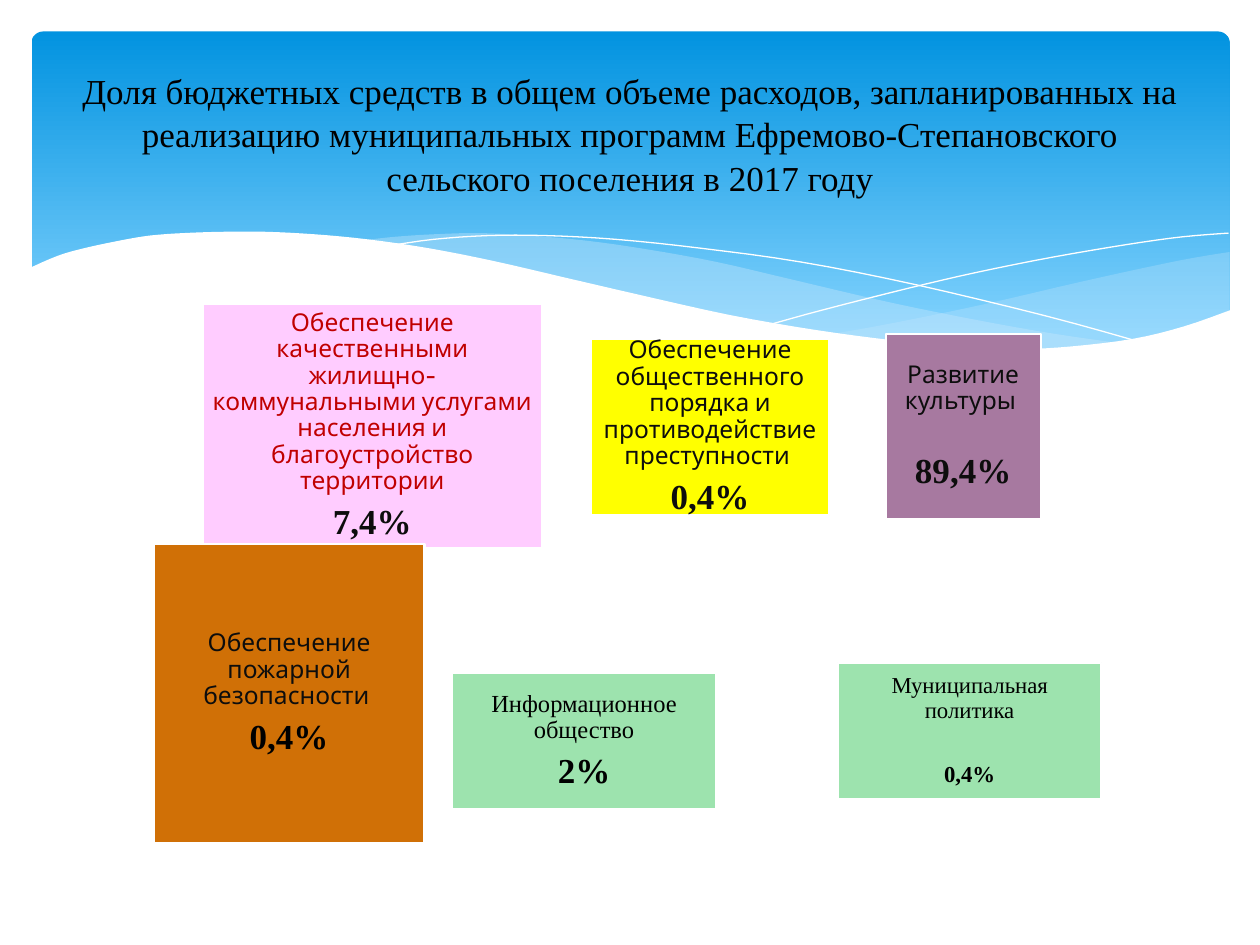
from pptx import Presentation
from pptx.dml.color import RGBColor
from pptx.enum.shapes import MSO_SHAPE
from pptx.enum.text import MSO_ANCHOR, PP_ALIGN
from pptx.oxml import parse_xml
from pptx.oxml.ns import nsdecls
from pptx.util import Inches, Pt

RECT, ROUNDED = MSO_SHAPE.RECTANGLE, MSO_SHAPE.ROUNDED_RECTANGLE
MIDDLE, CENTER = MSO_ANCHOR.MIDDLE, PP_ALIGN.CENTER
SERIF, SANS = "Times New Roman", "Cabin"

TITLE = ("Доля бюджетных средств в общем объеме расходов, запланированных на "
         "реализацию муниципальных программ Ефремово-Степановского "
         "сельского поселения в 2017 году")

# (left, top, width, height), fill, (label, font, size, colour),
# (share, size, colour), extra gap above the share in points
PROGRAMS = [
    ((1.61, 2.41, 2.69, 1.94), "FFCCFF",
     ("Обеспечение качественными жилищно-коммунальными услугами населения "
      "и благоустройство территории", SANS, 14, "C00000"),
     ("7,4%", 20, "0D0D0D"), 0),
    ((4.69, 2.69, 1.89, 1.4), "FFFF00",
     ("Обеспечение общественного порядка и противодействие преступности ",
      SANS, 14, "0D0D0D"), ("0,4%", 20, "0D0D0D"), 0),
    ((7.03, 2.65, 1.23, 1.47), "A779A0",
     ("Развитие культуры ", SANS, 14, "0D0D0D"), ("89,4%", 20, "0D0D0D"), 17),
    ((1.22, 4.32, 2.15, 2.37), "D07006",
     ("Обеспечение пожарной безопасности ", SANS, 14, "0D0D0D"),
     ("0,4%", 20, "000000"), 0),
    ((3.59, 5.34, 2.09, 1.08), "9DE3AE",
     ("Информационное общество", SERIF, 14, "000000"),
     ("2%", 20, "000000"), 0),
    ((6.65, 5.26, 2.09, 1.08), "9DE3AE",
     ("Муниципальная политика", SERIF, 13, "000000"),
     ("0,4%", 13, "000000"), 18),
]

# Each wave is a list of smooth runs; runs meet at corners.
RIGHT_WAVE = [
    [(9.76, 2), (9.35, 2.07), (8.61, 2.23), (7.79, 2.42), (7.06, 2.57), (6.61, 2.65)],
    [(6.61, 2.65), (7.05, 2.71), (7.57, 2.76), (8.03, 2.78), (8.44, 2.77),
     (8.81, 2.73), (9.13, 2.67), (9.42, 2.59), (9.76, 2.47)],
]
LEFT_WAVE = [
    [(8.93, 2.73), (8.37, 2.65), (7.75, 2.54), (7.06, 2.4), (6.29, 2.22),
     (5.69, 2.08), (5.14, 1.98), (4.65, 1.91), (4.2, 1.87), (3.8, 1.85),
     (3.44, 1.86), (3.13, 1.88), (2.86, 1.91)],
    [(2.86, 1.91), (3.42, 1.99), (4.04, 2.11), (4.49, 2.22), (5.3, 2.4),
     (6.01, 2.55), (6.65, 2.66), (7.22, 2.74), (7.73, 2.77), (8.18, 2.78),
     (8.57, 2.77), (8.93, 2.73)],
]
FALLING_LINE = [
    [(3.09, 1.95), (3.44, 1.9), (3.87, 1.87), (4.33, 1.87), (4.89, 1.9),
     (5.56, 1.97), (6.36, 2.08), (7.27, 2.26), (8.31, 2.51), (9.07, 2.72)],
]
RISING_LINE = [
    [(6.13, 2.57), (6.53, 2.46), (7.2, 2.29), (7.76, 2.16), (8.36, 2.04),
     (8.95, 1.94), (9.38, 1.88), (9.75, 1.85)],
]
WHITE_WAVE = [
    [(9.77, 2.46), (9.4, 2.59), (8.99, 2.69), (8.5, 2.75), (8.09, 2.77),
     (7.61, 2.75), (7.08, 2.7), (6.48, 2.62), (5.79, 2.5), (5.03, 2.33),
     (4.47, 2.2), (3.91, 2.07), (3.4, 1.97), (2.92, 1.9), (2.5, 1.86),
     (2.11, 1.84), (1.77, 1.84), (1.46, 1.85), (1.19, 1.87), (0.95, 1.91),
     (0.67, 1.97), (0.46, 2.03), (0.23, 2.13)],
    [(0.23, 2.13), (0.23, 3.29)],
    [(0.23, 3.29), (9.77, 3.29)],
]


def rgb(value):
    return RGBColor.from_string(value)


def smooth(run, steps=4):
    """Return points of a Catmull-Rom curve through the run."""
    ends = [run[0], *run, run[-1]]
    points = [run[0]]
    for a, b, c, d in zip(ends, ends[1:], ends[2:], ends[3:]):
        for i in range(1, steps + 1):
            t = i / steps
            points.append(tuple(
                0.5 * (2 * q + (r - p) * t + (2 * p - 5 * q + 4 * r - s) * t ** 2
                       + (3 * q - p - 3 * r + s) * t ** 3)
                for p, q, r, s in zip(a, b, c, d)))
    return points


def add_curve(shapes, runs, closed):
    points = [(Inches(x), Inches(y)) for run in runs for x, y in smooth(run)]
    builder = shapes.build_freeform(*points[0])
    builder.add_line_segments(points[1:], close=closed)
    sp = builder.convert_to_shape()
    sp.shadow.inherit = False
    return sp


def add_wave(shapes, runs, color, opacity=100):
    sp = add_curve(shapes, runs, True)
    sp.fill.solid()
    sp.fill.fore_color.rgb = rgb(color)
    sp.line.fill.background()
    if opacity < 100:
        srgb = sp.fill._xPr.find(".//{*}srgbClr")
        srgb.append(parse_xml(f'<a:alpha {nsdecls("a")} val="{opacity * 1000}"/>'))


def add_thin_line(shapes, runs):
    sp = add_curve(shapes, runs, False)
    sp.fill.background()
    sp.line.color.rgb = rgb("FFFFFF")
    sp.line.width = Pt(0)


def add_banner(shapes):
    sp = shapes.add_shape(ROUNDED, *map(Inches, (0.25, 0.25, 9.51, 2.7)))
    sp.adjustments[0] = 0.034
    sp.shadow.inherit = False
    sp.line.fill.background()
    sp.fill.gradient()
    sp.fill.gradient_angle = 270
    for stop, (position, color) in zip(sp.fill.gradient_stops,
                                       [(0, "0293E0"), (0.9, "83D3FE")]):
        stop.position = position
        stop.color.rgb = rgb(color)


def write(p, text, font, size, color, bold=False):
    p.text = text
    p.alignment = CENTER
    f = p.runs[0].font
    f.name, f.size, f.bold = font, Pt(size), bold
    f.color.rgb = rgb(color)


def add_program(shapes, box, fill, label, share, gap):
    sp = shapes.add_shape(RECT, *map(Inches, box))
    sp.shadow.inherit = False
    sp.fill.solid()
    sp.fill.fore_color.rgb = rgb(fill)
    sp.line.color.rgb = rgb("FFFFFF")
    sp.line.width = Pt(1.25)
    tf = sp.text_frame
    tf.word_wrap = True
    tf.vertical_anchor = MIDDLE
    tf.margin_left = tf.margin_right = tf.margin_top = tf.margin_bottom = Inches(0.06)
    value, size, color = share
    write(tf.paragraphs[0], *label)
    write(tf.add_paragraph(), value, SERIF, size, color, bold=True)
    for p in tf.paragraphs:
        p.line_spacing = 0.9
        p.space_after = Pt(5)
    p.space_before = Pt(gap)


def add_title(shapes):
    tf = shapes.add_textbox(*map(Inches, (0.5, 0.37, 9, 1.37))).text_frame
    tf.word_wrap = True
    tf.vertical_anchor = MIDDLE
    write(tf.paragraphs[0], TITLE, SERIF, 20, "000000")
    tf.paragraphs[0].line_spacing = 1.04


def main():
    prs = Presentation()
    prs.slide_width, prs.slide_height = Inches(10), Inches(7.5)
    shapes = prs.slides.add_slide(prs.slide_layouts[6]).shapes
    add_banner(shapes)
    add_wave(shapes, RIGHT_WAVE, "C6E7FC", 29)
    add_wave(shapes, LEFT_WAVE, "C6E7FC", 40)
    add_thin_line(shapes, FALLING_LINE)
    add_thin_line(shapes, RISING_LINE)
    add_wave(shapes, WHITE_WAVE, "FFFFFF")
    for program in PROGRAMS:
        add_program(shapes, *program)
    add_title(shapes)
    prs.save("out.pptx")


if __name__ == "__main__":
    main()
